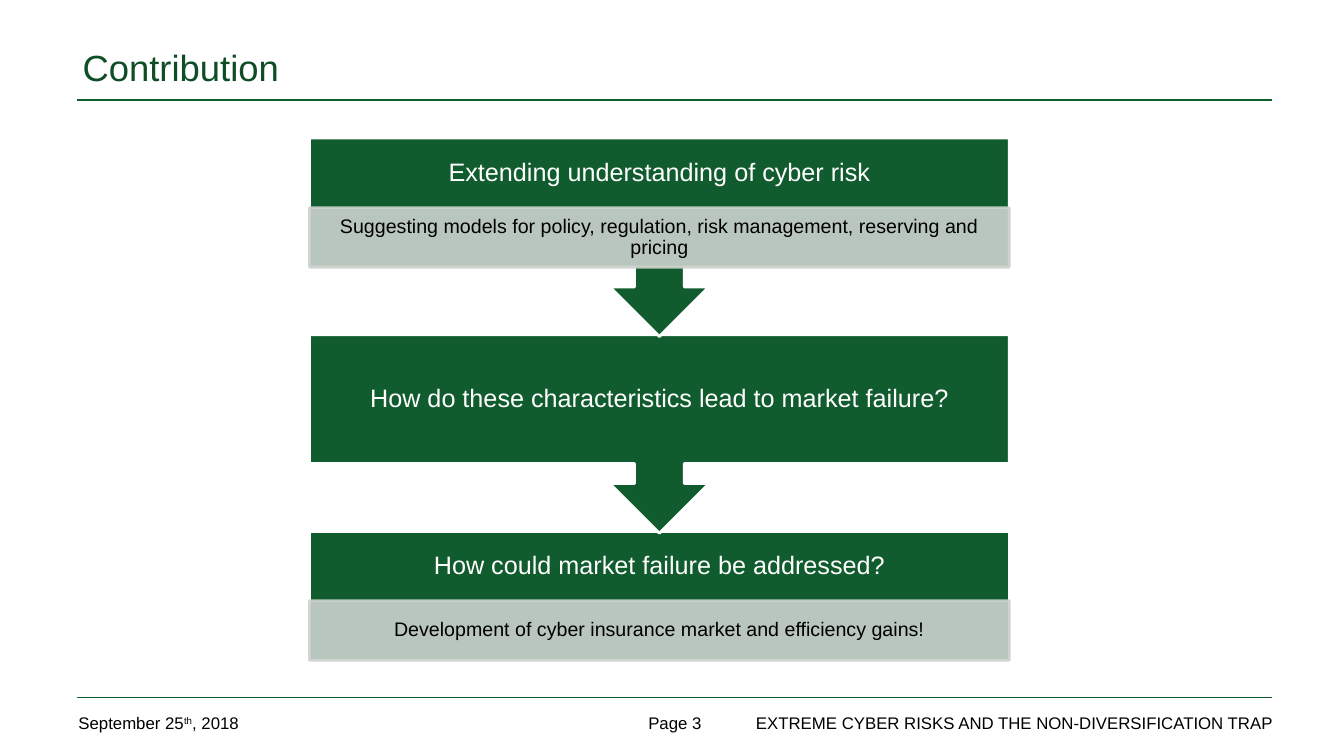
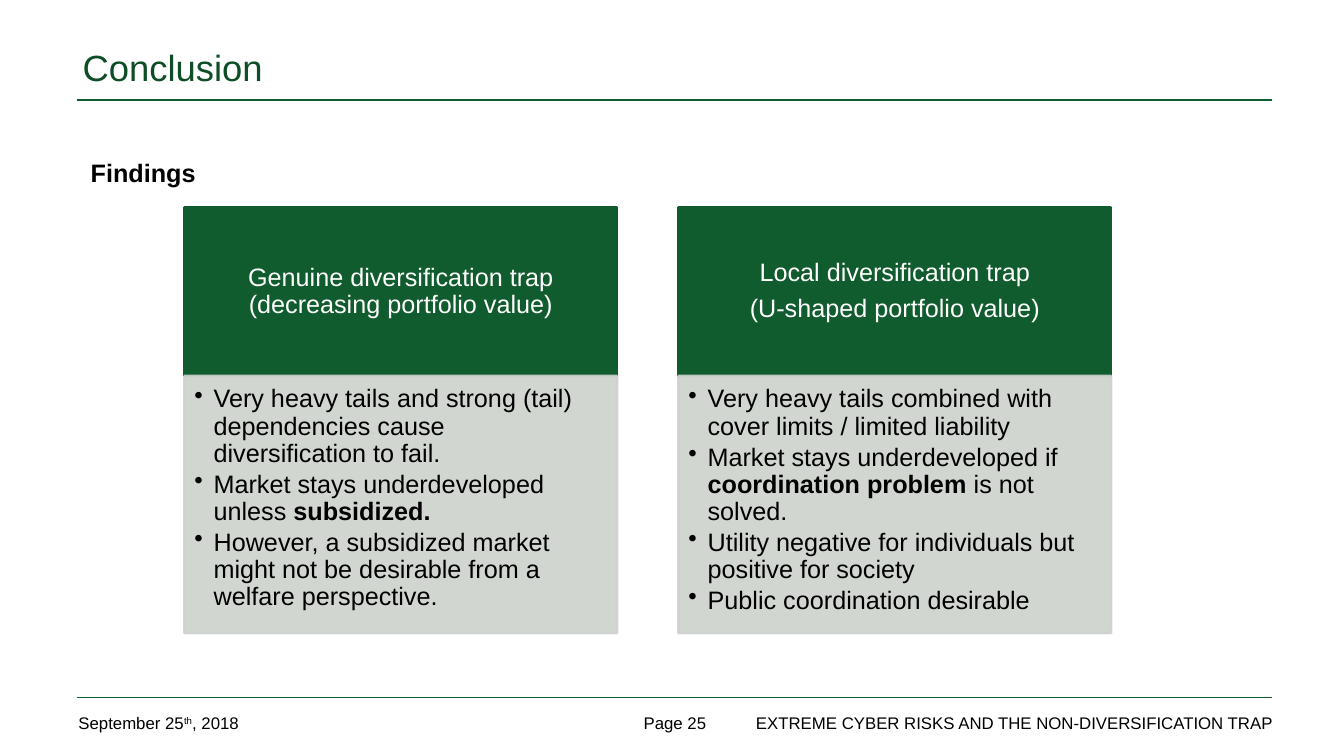
from dataclasses import dataclass

from lxml.etree import SubElement
from pptx import Presentation
from pptx.dml.color import RGBColor
from pptx.enum.shapes import MSO_CONNECTOR, MSO_SHAPE
from pptx.enum.text import MSO_ANCHOR, MSO_AUTO_SIZE, PP_ALIGN
from pptx.oxml.ns import qn
from pptx.util import Inches, Pt

SLIDE_W, SLIDE_H = Inches(13.33), Inches(7.5)
CALLOUT_BODY = 0.65  # share of a callout's height above its arrow
BULLET_INDENT = Inches(0.19)


@dataclass(frozen=True)
class Theme:
    font: str = "Arial"
    title: str = "0E4D26"
    rule: str = "0F5C2D"
    dark: str = "115C2E"
    pale: str = "CCD2CD"
    white: str = "FFFFFF"
    ink: str = "000000"
    title_size: int = 26
    text_size: int = 18
    detail_size: int = 14
    footer_size: int = 12
    rule_width: float = 1.25
    outline_width: int = 2
    pale_opacity: int = 90


THEME = Theme()


@dataclass(frozen=True)
class Box:
    left: float
    top: float
    width: float
    height: float

    def share(self, left, top, width, height):
        """Return the box that takes these percentages of this one."""
        return Box(self.left + self.width * left / 100, self.top + self.height * top / 100,
                   self.width * width / 100, self.height * height / 100)

    def bounds(self):
        return [int(v) for v in (self.left, self.top, self.width, self.height)]


SLIDE = Box(0, 0, SLIDE_W, SLIDE_H)
TITLE_BOX = SLIDE.share(5.4, 5.33, 67.9, 6.93)
FINDINGS_BOX = SLIDE.share(6, 18.13, 13.58, 9.73)
FLOW_BOX = SLIDE.share(23.03, 18.27, 52.06, 69.07)
CARDS_BOX = SLIDE.share(13.73, 27.47, 68.94, 56.27)
RULE_LEFT, RULE_RIGHT = 5.7, 94.67
RULE_TOPS = (13.2, 92.27)

FOOTER = [
    (SLIDE.share(55.14, 94.27, 39.6, 2.67), PP_ALIGN.RIGHT, 0,
     [[("EXTREME CYBER RISKS AND THE NON-DIVERSIFICATION TRAP", {})]]),
    (SLIDE.share(5.1, 93.6, 21.31, 4), PP_ALIGN.LEFT, 0.1,
     [[("September 25", {}), ("th", {"superscript": True}), (", 2018", {})]]),
]
PAGE_BOX = SLIDE.share(37.88, 93.6, 24.68, 4)

STEPS = [
    ("Extending understanding of cyber risk",
     "Suggesting models for policy, regulation, risk management, reserving and pricing"),
    ("How do these characteristics lead to market failure?", None),
    ("How could market failure be addressed?",
     "Development of cyber insurance market and efficiency gains!"),
]
BOLD = {"bold": True}
CARDS = [
    ([[("Genuine diversification trap (decreasing portfolio value)", {})]],
     [[("Very heavy tails and strong (tail) dependencies cause diversification to fail.", {})],
      [("Market stays underdeveloped unless ", {}), ("subsidized.", BOLD)],
      [("However, a subsidized market might not be desirable from a welfare perspective.", {})]]),
    ([[("Local diversification trap", {})], [("(U-shaped portfolio value)", {})]],
     [[("Very heavy tails combined with cover limits / limited liability", {})],
      [("Market stays underdeveloped if ", {}), ("coordination problem ", BOLD),
       ("is not solved.", {})],
      [("Utility negative for individuals but positive for society", {})],
      [("Public coordination desirable", {})]]),
]


def set_all(target, values):
    for name, value in values.items():
        setattr(target, name, value)


def write(shape, paragraphs, size, color, align=PP_ALIGN.LEFT, anchor=MSO_ANCHOR.MIDDLE,
          insets=(0.1, 0.05, 0.1, 0.05), spacing=1.0, after=0, bullet=None):
    """Fill a shape with paragraphs, each a list of (text, format) runs."""
    frame = shape.text_frame
    sides = ("margin_left", "margin_top", "margin_right", "margin_bottom")
    set_all(frame, {"word_wrap": True, "auto_size": MSO_AUTO_SIZE.NONE, "vertical_anchor": anchor,
                    **{side: Inches(inset) for side, inset in zip(sides, insets)}})
    for index, runs in enumerate(paragraphs):
        paragraph = frame.add_paragraph() if index else frame.paragraphs[0]
        set_all(paragraph, {"alignment": align, "line_spacing": spacing,
                            "space_before": Pt(0), "space_after": Pt(size * after)})
        properties = paragraph._p.get_or_add_pPr()
        indent = BULLET_INDENT if bullet else 0
        properties.set("marL", str(indent))
        properties.set("indent", str(-indent))
        if bullet:
            SubElement(properties, qn("a:buChar")).set("char", bullet)
        else:
            SubElement(properties, qn("a:buNone"))
        for text, style in runs:
            run = paragraph.add_run()
            run.text = text
            set_all(run.font, {"name": THEME.font, "size": Pt(size),
                               "bold": style.get("bold", False)})
            run.font.color.rgb = RGBColor.from_string(color)
            if style.get("superscript"):
                run._r.get_or_add_rPr().set("baseline", "30000")


def add_panel(slide, box, fill, outline, preset=MSO_SHAPE.RECTANGLE, opacity=100):
    panel = slide.shapes.add_shape(preset, *box.bounds())
    panel.shadow.inherit = False
    panel.fill.solid()
    panel.fill.fore_color.rgb = RGBColor.from_string(fill)
    panel.line.color.rgb = RGBColor.from_string(outline)
    panel.line.width = Pt(THEME.outline_width)
    if opacity < 100:
        for color in panel._element.spPr.findall(".//" + qn("a:srgbClr")):
            SubElement(color, qn("a:alpha")).set("val", str(opacity * 1000))
    return panel


def add_pale_panel(slide, box):
    return add_panel(slide, box, THEME.pale, THEME.pale, opacity=THEME.pale_opacity)


def add_rule(slide, top):
    left, y, width, _ = SLIDE.share(RULE_LEFT, top, RULE_RIGHT - RULE_LEFT, 0).bounds()
    rule = slide.shapes.add_connector(MSO_CONNECTOR.STRAIGHT, left, y, left + width, y)
    rule.line.color.rgb = RGBColor.from_string(THEME.rule)
    rule.line.width = Pt(THEME.rule_width)
    SubElement(rule._element.spPr, qn("a:effectLst"))


def place(shape, box):
    set_all(shape, dict(zip(("left", "top", "width", "height"), box.bounds())))


def add_framed_slide(prs, layout, title, page):
    """Add a slide with its title, rules and footer."""
    slide = prs.slides.add_slide(prs.slide_layouts.get_by_name(layout))
    place(slide.shapes.title, TITLE_BOX)
    write(slide.shapes.title, [[(title, {})]], THEME.title_size, THEME.title,
          anchor=MSO_ANCHOR.TOP)
    for top in RULE_TOPS:
        add_rule(slide, top)
    page_entry = (PAGE_BOX, PP_ALIGN.CENTER, 0.1, [[(f"Page {page}", {})]])
    for box, align, inset, paragraphs in [*FOOTER, page_entry]:
        write(slide.shapes.add_textbox(*box.bounds()), paragraphs, THEME.footer_size, THEME.ink,
              align, insets=(inset, inset / 2) * 2)
    return slide


def add_step(slide, box, heading, detail, has_arrow):
    """Draw one step; its arrow reaches below the box."""
    heading_share = 53.9 if detail else 100
    detail_box = box.share(0, heading_share, 100, 100 - heading_share)
    preset, height = MSO_SHAPE.RECTANGLE, 100
    if has_arrow:
        preset, height = MSO_SHAPE.DOWN_ARROW_CALLOUT, 100 / CALLOUT_BODY
    panel = add_panel(slide, box.share(0, 0, 100, height), THEME.dark, THEME.white, preset)
    write(panel, [[(heading, {})]], THEME.text_size, THEME.white, PP_ALIGN.CENTER,
          insets=(0.14, 0.14, 0.14, 0.14 + detail_box.height / Inches(1)),
          spacing=0.9, after=0.35)
    if detail:
        write(add_pale_panel(slide, detail_box), [[(detail, {})]], THEME.detail_size, THEME.ink,
              PP_ALIGN.CENTER, insets=(0.11, 0.02) * 2, spacing=0.9, after=0.35)


def add_flow(slide, box, steps):
    step_share = 24.71
    last = len(steps) - 1
    pitch = (100 - step_share) / last
    for index in range(last, -1, -1):
        add_step(slide, box.share(0, index * pitch, 100, step_share), *steps[index],
                 has_arrow=index < last)


def add_card(slide, box, heading, points):
    heading_share = 39.57
    header = add_panel(slide, box.share(0, 0, 100, heading_share), THEME.dark, THEME.dark)
    write(header, heading, THEME.text_size, THEME.white, PP_ALIGN.CENTER,
          insets=(0.14, 0.08) * 2, spacing=0.9, after=0.35)
    body = add_pale_panel(slide, box.share(0, heading_share, 100, 100 - heading_share))
    write(body, points, THEME.text_size, THEME.ink, anchor=MSO_ANCHOR.TOP,
          insets=(0.1, 0.1, 0.14, 0.16), spacing=0.9, after=0.15, bullet="•")


def add_cards(slide, box, cards):
    gap = 6.64
    width = (100 - gap * (len(cards) - 1)) / len(cards)
    for index, (heading, points) in enumerate(cards):
        add_card(slide, box.share(index * (width + gap), 0, width, 100), heading, points)


def build_contribution(prs):
    slide = add_framed_slide(prs, "Title Only", "Contribution", 3)
    add_flow(slide, FLOW_BOX, STEPS)


def build_conclusion(prs):
    slide = add_framed_slide(prs, "Title and Content", "Conclusion", 25)
    findings = slide.placeholders[1]
    place(findings, FINDINGS_BOX)
    write(findings, [[("Findings", BOLD)]], THEME.text_size, THEME.ink,
          anchor=MSO_ANCHOR.TOP, spacing=1.5)
    add_cards(slide, CARDS_BOX, CARDS)


def main():
    prs = Presentation()
    prs.slide_width, prs.slide_height = SLIDE_W, SLIDE_H
    build_contribution(prs)
    build_conclusion(prs)
    prs.save("out.pptx")


if __name__ == "__main__":
    main()
